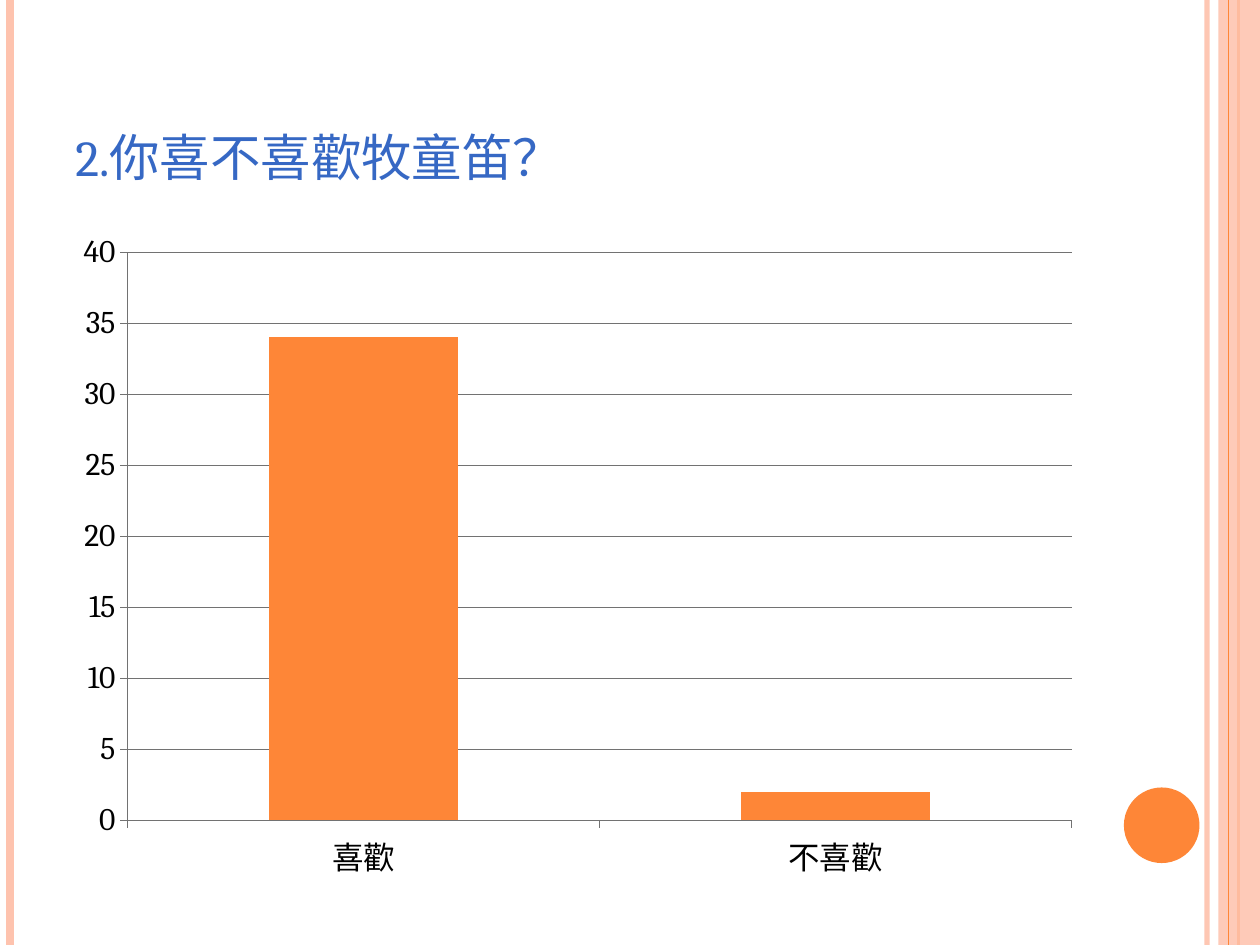
from dataclasses import dataclass

from lxml import etree
from pptx import Presentation
from pptx import util as u
from pptx.chart.data import CategoryChartData
from pptx.dml.color import RGBColor
from pptx.enum import chart as ch, shapes, text
from pptx.oxml.ns import qn

COLORS = {"orange": "FE8637", "peach": "FEC3AE", "title": "3668C4",
          "text": "000000", "axis": "727272"}
FONT = "Cambria"


@dataclass
class Rule:
    """A vertical line over the full height of the slide."""
    x: float
    color: str
    width: float
    alpha: int = 100


@dataclass
class Block:
    kind: shapes.MSO_SHAPE
    left: float
    top: float
    width: float
    height: float
    color: str
    alpha: int = 100


DECORATION = [
    Rule(9.58, "peach", 3, 93),
    Rule(0.08, "peach", 4.5),
    Rule(9.83, "orange", 1.5),
    Block(shapes.MSO_SHAPE.RECTANGLE, 9.67, 0, 0.33, 7.5, "peach", 87),
    Rule(9.75, "orange", 0.75),
    Block(shapes.MSO_SHAPE.OVAL, 8.92, 6.25, 0.6, 0.6, "orange"),
]


def rgb(name: str) -> RGBColor:
    return RGBColor.from_string(COLORS[name])


def set_alpha(properties, percent: int) -> None:
    """Make the first colour inside the shape properties see-through."""
    if percent < 100:
        color = next(properties.iter(qn("a:srgbClr")))
        etree.SubElement(color, qn("a:alpha"), val=str(percent * 1000))


def set_font(font, size: int, color: str) -> None:
    for name, value in {"name": FONT, "size": u.Pt(size), "bold": False}.items():
        setattr(font, name, value)
    font.color.rgb = rgb(color)


def draw_rule(page, rule: Rule) -> None:
    x = u.Inches(rule.x)
    line = page.shapes.add_connector(
        shapes.MSO_CONNECTOR.STRAIGHT, x, 0, x, u.Inches(7.5))
    line.line.color.rgb = rgb(rule.color)
    line.line.width = u.Pt(rule.width)
    properties = line._element.spPr
    set_alpha(properties, rule.alpha)
    etree.SubElement(properties, qn("a:effectLst"))


def draw_block(page, block: Block) -> None:
    shape = page.shapes.add_shape(
        block.kind, u.Inches(block.left), u.Inches(block.top),
        u.Inches(block.width), u.Inches(block.height))
    shape.shadow.inherit = False
    shape.fill.solid()
    shape.fill.fore_color.rgb = rgb(block.color)
    shape.line.fill.background()
    set_alpha(shape._element.spPr, block.alpha)


def draw_title(page, wording: str) -> None:
    box = page.shapes.add_textbox(
        u.Inches(0.5), u.Inches(0.3), u.Inches(8.17), u.Inches(1.25))
    frame = box.text_frame
    frame.word_wrap = True
    frame.vertical_anchor = text.MSO_ANCHOR.BOTTOM
    span = frame.paragraphs[0].add_run()
    span.text = wording
    set_font(span.font, 36, "title")
    span.font._element.set("cap", "small")


def draw_chart(page) -> None:
    data = CategoryChartData()
    data.categories = ["喜歡", "不喜歡"]
    data.add_series("Series 1", [34, 2])
    chart = page.shapes.add_chart(
        ch.XL_CHART_TYPE.COLUMN_CLUSTERED, u.Inches(0.5), u.Inches(1.75),
        u.Inches(8.17), u.Inches(5.33), data).chart
    chart.has_legend = False
    chart.has_title = False
    set_font(chart.font, 18, "text")

    plot = chart.plots[0]
    plot.gap_width = 150
    plot.vary_by_categories = False
    fill = plot.series[0].format.fill
    fill.solid()
    fill.fore_color.rgb = rgb("orange")

    values, categories = chart.value_axis, chart.category_axis
    for name, value in {"minimum_scale": 0, "maximum_scale": 40,
                        "major_unit": 5, "has_major_gridlines": True}.items():
        setattr(values, name, value)
    for axis in (values, categories):
        axis.major_tick_mark = ch.XL_TICK_MARK.OUTSIDE
    for part in (values, categories, values.major_gridlines):
        part.format.line.color.rgb = rgb("axis")
        part.format.line.width = u.Pt(0.75)


def main() -> None:
    deck = Presentation()
    deck.slide_width, deck.slide_height = u.Inches(10), u.Inches(7.5)
    page = deck.slides.add_slide(deck.slide_layouts[6])
    for item in DECORATION:
        if isinstance(item, Rule):
            draw_rule(page, item)
        else:
            draw_block(page, item)
    draw_title(page, "2.你喜不喜歡牧童笛？")
    draw_chart(page)
    deck.save("out.pptx")


if __name__ == "__main__":
    main()
